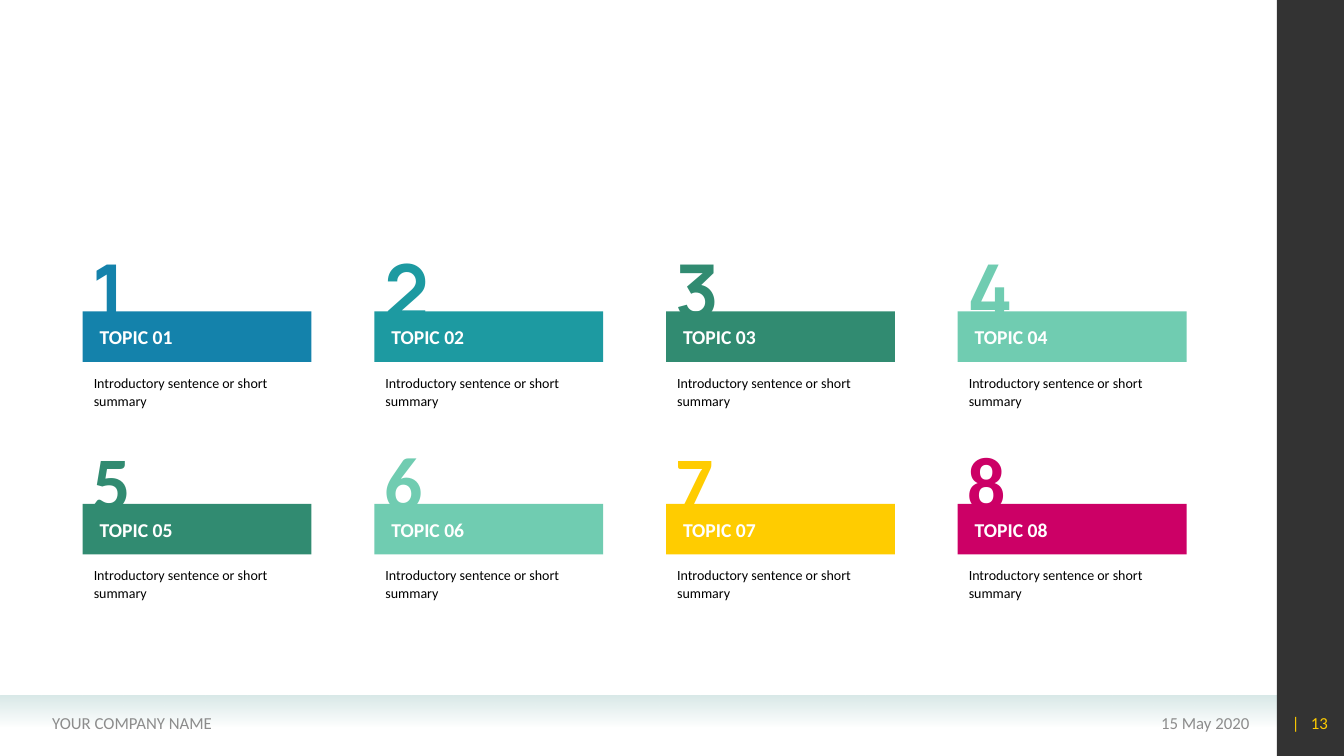
from lxml import etree
from pptx import Presentation
from pptx import util as u
from pptx.dml.color import RGBColor
from pptx.enum import shapes, text
from pptx.oxml.ns import qn

# Content: (label, colour), reading order, four to a row
TOPICS = [
    ("TOPIC 01", "1482AB"), ("TOPIC 02", "1D9AA1"),
    ("TOPIC 03", "318B71"), ("TOPIC 04", "70CCB1"),
    ("TOPIC 05", "318B71"), ("TOPIC 06", "70CCB1"),
    ("TOPIC 07", "FFCC00"), ("TOPIC 08", "CC0066"),
]
SUMMARY = "Introductory sentence or short summary"
FOOTER = [  # text, left, width, alignment, colour
    ("15 May 2020", 9.1, 3.39, "RIGHT", "8C8C8C"),
    ("YOUR COMPANY NAME", 0.42, 4.9, "LEFT", "8C8C8C"),
    ("|   13", 12.6, 0.67, "RIGHT", "FFCC00"),
]

# Grid, in inches
W, H = 13.33, 7.5
COLS, LEFT, COL_STEP = 4, 0.82, 2.893
TOP, ROW_STEP = 3.09, 1.91
BAR_W, BAR_H = 2.27, 0.5
SIDE_X = 0.95 * W
NUMBER_RISE = (0.73, 0.74)          # per row
NUMBER_FONT = ("Manrope", "Calibri")  # per row

# Text formats
LABEL = dict(size=14, bold=True, anchor="BOTTOM", wrap=False, grow=True)
NOTE = dict(size=10, insets=(0.04, 0.02), grow=True,
            para=dict(line_spacing=u.Pt(12.9), space_before=u.Pt(2)))
NUMBER = dict(size=54, bold=True, anchor="MIDDLE", wrap=False, grow=True)
FOOT = dict(size=12, anchor="MIDDLE")


def rgb(hex_colour):
    return RGBColor.from_string(hex_colour)


def box(x, y, w, h):
    return [u.Inches(v) for v in (x, y, w, h)]


def add_rect(s, x, y, w, h, colour=None):
    sp = s.shapes.add_shape(shapes.MSO_SHAPE.RECTANGLE, *box(x, y, w, h))
    sp.shadow.inherit = False
    sp.line.fill.background()
    if colour:
        sp.fill.solid()
        sp.fill.fore_color.rgb = rgb(colour)
    return sp


def set_alpha(colour_element, percent):
    etree.SubElement(colour_element, qn("a:alpha"), val=str(percent * 1000))


def add_text(s, words, x, y, w, h, colour, size, font="Calibri", bold=False,
             anchor="TOP", align="LEFT", wrap=True, grow=False,
             insets=(0.1, 0.05), para=None):
    tf = s.shapes.add_textbox(*box(x, y, w, h)).text_frame
    dx, dy = map(u.Inches, insets)
    frame = dict(word_wrap=wrap, vertical_anchor=text.MSO_ANCHOR[anchor],
                 margin_left=dx, margin_right=dx, margin_top=dy, margin_bottom=dy)
    if grow:
        frame["auto_size"] = text.MSO_AUTO_SIZE.SHAPE_TO_FIT_TEXT
    p = tf.paragraphs[0]
    r = p.add_run()
    r.text = words
    r.font.color.rgb = rgb(colour)
    for target, values in (
        (tf, frame),
        (p, dict(alignment=text.PP_ALIGN[align], **(para or {}))),
        (r.font, dict(size=u.Pt(size), name=font, bold=bold)),
    ):
        for key, value in values.items():
            setattr(target, key, value)


def add_frame(s):
    # Fading footer band
    band = add_rect(s, 0, 6.9, SIDE_X, 0.31)
    band.fill.gradient()
    band.fill.gradient_angle = 270
    for stop, position in zip(band.fill.gradient_stops, (0, 1)):
        stop.color.rgb = rgb("D9E9E8")
        stop.position = position
    set_alpha(list(band.fill._xPr.iter(qn("a:srgbClr")))[-1], 0)

    # Dark side bar
    side = add_rect(s, SIDE_X, 0, W - SIDE_X, H, "000000")
    set_alpha(next(side._element.spPr.iter(qn("a:srgbClr"))), 80)

    # Footer texts
    for words, x, w, align, colour in FOOTER:
        add_text(s, words, x, 6.97, w, 0.4, colour, align=align, **FOOT)


def add_topic(s, index, label, colour):
    row, col = divmod(index, COLS)
    x, y = LEFT + col * COL_STEP, TOP + row * ROW_STEP
    add_rect(s, x, y, BAR_W, BAR_H, colour)
    add_text(s, label, x + 0.07, y + 0.08, 0.98, 0.34, "FFFFFF", **LABEL)
    add_text(s, SUMMARY, x + 0.07, y + 0.59, 2.13, 0.39, "000000", **NOTE)
    add_text(s, str(index + 1), x, y - NUMBER_RISE[row], 0.59, 1.01, colour,
             font=NUMBER_FONT[row], **NUMBER)


def main():
    prs = Presentation()
    prs.slide_width, prs.slide_height = u.Inches(W), u.Inches(H)
    s = prs.slides.add_slide(prs.slide_layouts[6])
    add_frame(s)
    for index, (label, colour) in enumerate(TOPICS):
        add_topic(s, index, label, colour)
    prs.save("out.pptx")


if __name__ == "__main__":
    main()
